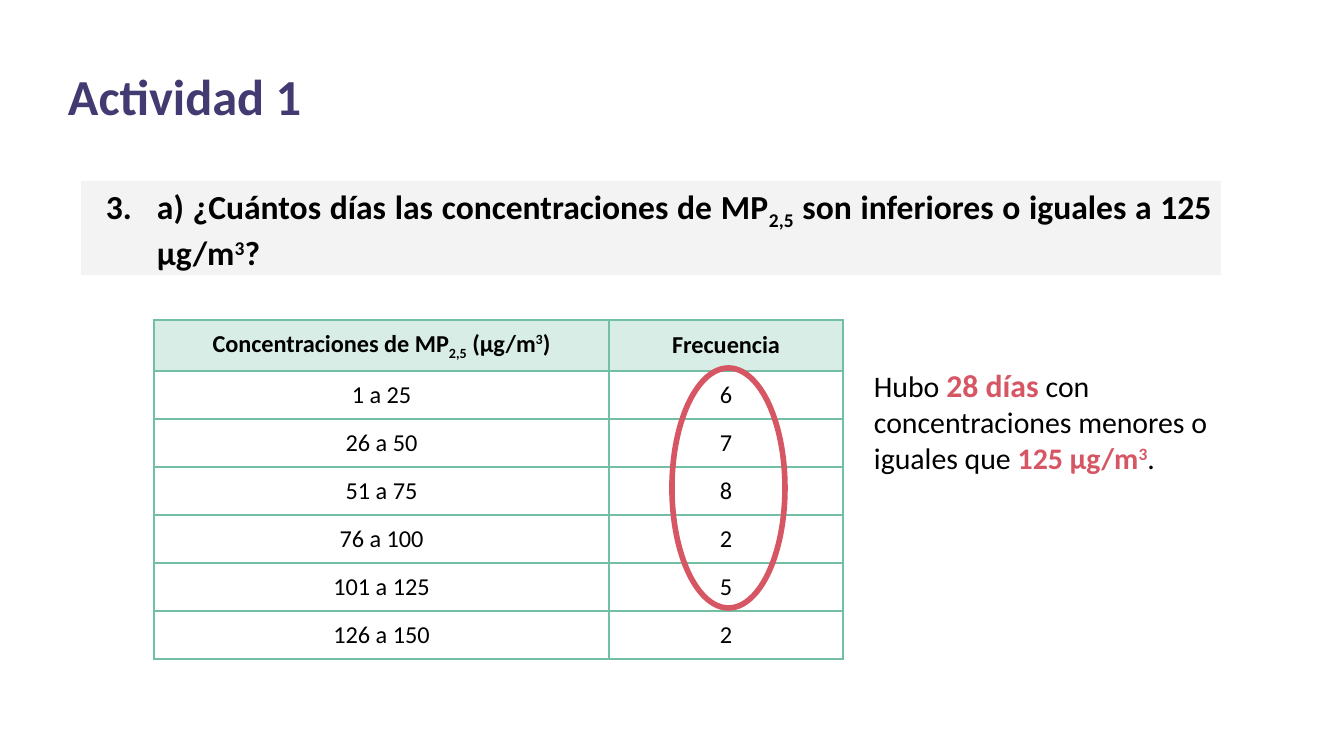
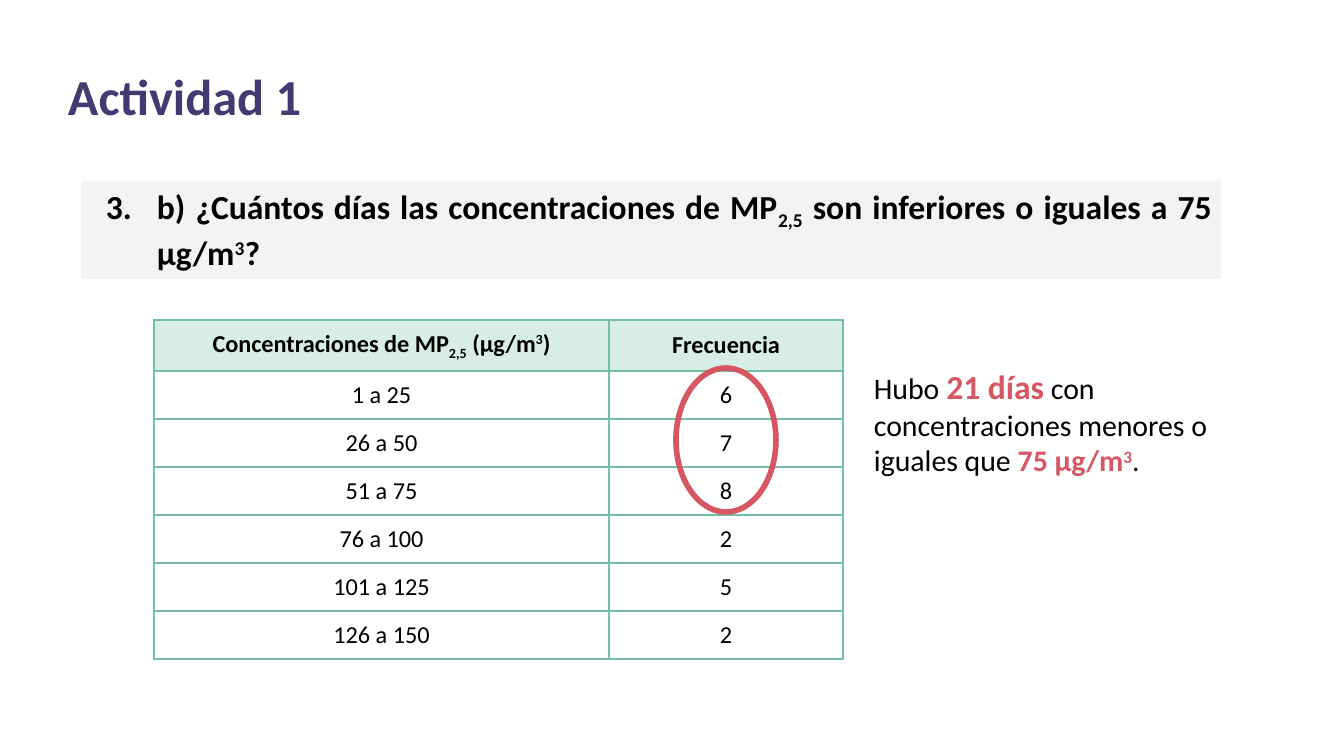
from dataclasses import dataclass
from lxml.etree import SubElement
from pptx import Presentation
from pptx.dml.color import RGBColor as Rgb
from pptx.enum.shapes import MSO_SHAPE as Shape
from pptx.enum.text import MSO_ANCHOR as Anchor, MSO_AUTO_SIZE as AutoSize, PP_ALIGN as Align
from pptx.oxml.ns import qn
from pptx.util import Emu, Pt


@dataclass(frozen=True)
class Theme:
    font: str = "Calibri"
    title: str = "423B71"
    text: str = "000000"
    accent: str = "D65664"
    band: str = "F3F3F3"
    header: str = "D8EDE6"
    border: str = "72BFA4"
    title_size: int = 27
    question_size: int = 18
    answer_size: int = 16
    table_size: int = 13


theme = Theme()
SCALE = 914400 / 134.4
SUBSCRIPT, SUPERSCRIPT = -25, 30


def px(*lengths):
    return [Emu(round(length * SCALE)) for length in lengths]


def write(paragraph, pieces, size, color=theme.text, bold=False):
    for text, changes in pieces:
        run = paragraph.add_run()
        run.text = text
        run.font.name = theme.font
        run.font.size = Pt(changes.get("size", size))
        run.font.bold = changes.get("bold", bold)
        run.font.color.rgb = Rgb.from_string(changes.get("color", color))
        if "baseline" in changes:
            run.font._element.set("baseline", str(changes["baseline"] * 1000))


sub, sup = {"baseline": SUBSCRIPT}, {"baseline": SUPERSCRIPT}
strong = {"color": theme.accent, "bold": True}

frequencies = [
    ("1 a 25", "6"),
    ("26 a 50", "7"),
    ("51 a 75", "8"),
    ("76 a 100", "2"),
    ("101 a 125", "5"),
    ("126 a 150", "2"),
]
table_rows = [
    ([("Concentraciones de MP", {}), ("2,5", sub), (" (μg/m", {}), ("3", sup), (")", {})],
     [("Frecuencia", {})]),
    *[([(interval, {})], [(count, {})]) for interval, count in frequencies],
]
column_widths = [455, 234]
row_heights = [51] + [48] * len(frequencies)

questions = [
    {"letter": "a", "limit": "125", "days": "28 días", "days_size": 17,
     "band_height": 94, "ring": (672, 368, 113, 240)},
    {"letter": "b", "limit": "75", "days": "21 días", "days_size": 18,
     "band_height": 98, "ring": (676, 368, 100, 144)},
]

presentation = Presentation()
presentation.slide_width, presentation.slide_height = px(1344, 756)

for question in questions:
    slide = presentation.slides.add_slide(presentation.slide_layouts[5])

    title = slide.shapes.title
    title.left, title.top, title.width, title.height = px(59, 60, 900, 72)
    frame = title.text_frame
    frame.auto_size = AutoSize.NONE
    frame.vertical_anchor = Anchor.TOP
    frame.margin_left, frame.margin_top, frame.margin_right, frame.margin_bottom = px(9, 5, 9, 5)
    frame.paragraphs[0].alignment = Align.LEFT
    write(frame.paragraphs[0], [("Actividad 1", {})], theme.title_size, theme.title, True)

    table = slide.shapes.add_table(
        len(table_rows), len(column_widths),
        *px(154, 320, sum(column_widths), sum(row_heights))).table
    table.first_row = table.horz_banding = False
    for column, width in zip(table.columns, px(*column_widths)):
        column.width = width
    for row, height in zip(table.rows, px(*row_heights)):
        row.height = height
    for row_index, row_pieces in enumerate(table_rows):
        for column_index, pieces in enumerate(row_pieces):
            cell = table.cell(row_index, column_index)
            cell.margin_left, cell.margin_top, cell.margin_right, cell.margin_bottom = px(9, 9, 9, 9)
            cell.vertical_anchor = Anchor.MIDDLE
            for side in ("a:lnL", "a:lnR", "a:lnT", "a:lnB"):
                border = SubElement(cell._tc.get_or_add_tcPr(), qn(side), w=str(Pt(1)))
                SubElement(SubElement(border, qn("a:solidFill")), qn("a:srgbClr"), val=theme.border)
            if row_index == 0:
                cell.fill.solid()
                cell.fill.fore_color.rgb = Rgb.from_string(theme.header)
            else:
                cell.fill.background()
            paragraph = cell.text_frame.paragraphs[0]
            paragraph.alignment = Align.CENTER
            write(paragraph, pieces, theme.table_size, bold=row_index == 0)

    ring = slide.shapes.add_shape(Shape.OVAL, *px(*question["ring"]))
    ring.shadow.inherit = False
    ring.fill.background()
    ring.line.color.rgb = Rgb.from_string(theme.accent)
    ring.line.width = Pt(3)

    answer = slide.shapes.add_textbox(*px(861, 353, 401, 139))
    frame = answer.text_frame
    frame.word_wrap = True
    frame.margin_left, frame.margin_top, frame.margin_right, frame.margin_bottom = px(13, 13, 13, 13)
    write(frame.paragraphs[0], [
        ("Hubo ", {}),
        (question["days"], {**strong, "size": question["days_size"]}),
        (" con concentraciones menores o iguales que ", {}),
        (f"{question['limit']} μg/m", strong),
        ("3", {**strong, **sup}),
        (".", {}),
    ], theme.answer_size)

    band = slide.shapes.add_shape(Shape.RECTANGLE, *px(81, 181, 1140, question["band_height"]))
    band.shadow.inherit = False
    band.fill.solid()
    band.fill.fore_color.rgb = Rgb.from_string(theme.band)
    band.line.fill.background()
    frame = band.text_frame
    frame.word_wrap = True
    frame.vertical_anchor = Anchor.TOP
    frame.margin_left, frame.margin_top, frame.margin_right, frame.margin_bottom = px(9, 5, 9, 5)
    paragraph = frame.paragraphs[0]
    paragraph.alignment = Align.JUSTIFY
    properties = paragraph._p.get_or_add_pPr()
    indent, hanging = px(67, -51)
    properties.set("marL", str(indent))
    properties.set("indent", str(hanging))
    SubElement(SubElement(properties, qn("a:buClr")), qn("a:srgbClr"), val=theme.text)
    SubElement(properties, qn("a:buFont"), typeface=theme.font)
    SubElement(properties, qn("a:buAutoNum"), type="arabicPeriod", startAt="3")
    write(paragraph, [
        (f"{question['letter']}) ¿Cuántos días las concentraciones de MP", {}),
        ("2,5", sub),
        (f" son inferiores o iguales a {question['limit']} μg/m", {}),
        ("3", sup),
        ("?", {}),
    ], theme.question_size, bold=True)

presentation.save("out.pptx")
